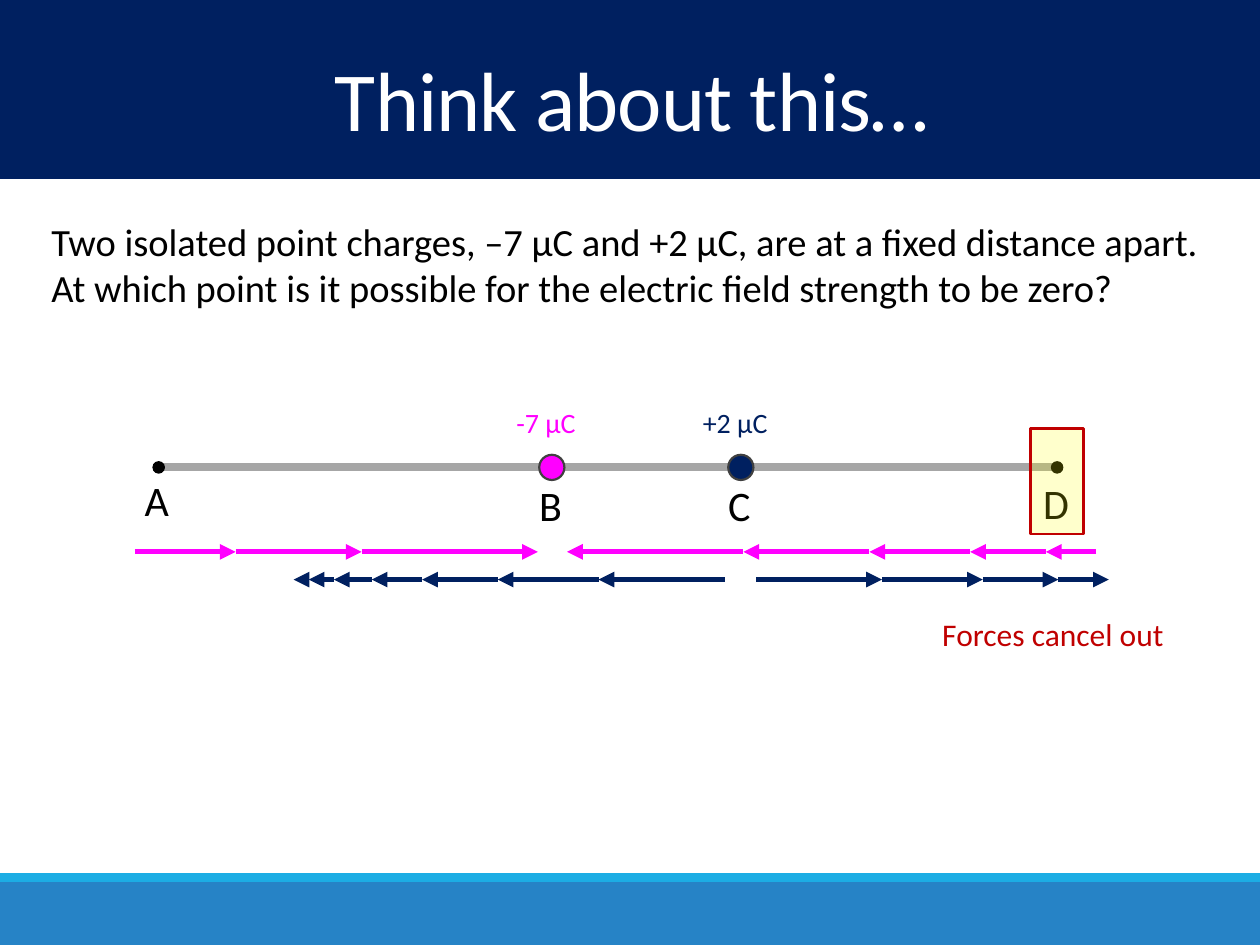
from typing import NamedTuple

from lxml import etree
from pptx import Presentation
from pptx import util as u
from pptx.dml import color
from pptx.enum import shapes, text
from pptx.oxml import ns

HUES = {
    "navy": "002060", "pink": "FF00FF", "red": "C00000", "yellow": "FFFF00",
    "white": "FFFFFF", "black": "000000", "gray": "A6A6A6", "edge": "404040",
    "blue": "2683C6", "sky": "1CADE4",
}
RECT = shapes.MSO_SHAPE.RECTANGLE
OVAL = shapes.MSO_SHAPE.OVAL
AXIS = 3.71


class Box(NamedTuple):
    x: float
    y: float
    w: float
    h: float


class Label(NamedTuple):
    words: str
    box: Box
    size: int
    hue: str
    wrap: bool = False


class Dot(NamedTuple):
    x: float
    size: float
    hue: str
    edge: str = ""


class Chain(NamedTuple):
    start: float
    y: float
    way: int
    steps: tuple[float, ...]
    hue: str
    inward: bool


BANDS = [
    (Box(0, 7, 10, 0.5), "blue"),
    (Box(0, 6.93, 10, 0.07), "sky"),
    (Box(0, 0, 10, 1.42), "navy"),
]
TITLE = Label("Think about this…", Box(0.03, 0.42, 9.97, 0.84), 48, "white", True)
DOTS = [
    Dot(4.38, 0.2, "pink", "edge"),
    Dot(5.88, 0.2, "navy", "edge"),
    Dot(1.26, 0.1, "black"),
    Dot(8.39, 0.1, "black"),
]
LABELS = [
    Label("Two isolated point charges, –7 μC and +2 μC, are at a fixed distance apart. "
          "At which point is it possible for the electric field strength to be zero?",
          Box(0.31, 1.68, 9.38, 0.84), 22, "black", True),
    Label("A", Box(1.05, 3.72, 0.42, 0.5), 24, "black"),
    Label("B", Box(4.18, 3.76, 0.39, 0.5), 24, "black"),
    Label("C", Box(5.68, 3.76, 0.42, 0.5), 24, "black"),
    Label("D", Box(8.18, 3.74, 0.44, 0.5), 24, "black"),
    Label("-7 μC", Box(4, 3.17, 0.74, 0.37), 16, "pink"),
    Label("+2 μC", Box(5.48, 3.17, 0.81, 0.37), 16, "navy"),
]
NOTE = Label("Forces cancel out", Box(7.38, 4.83, 2.13, 0.4), 18, "red", True)
CHAINS = [
    Chain(4.27, 4.38, -1, (1.4, 1, 0.8), "pink", True),
    Chain(4.5, 4.38, 1, (1.4, 1, 0.8, 0.6, 0.4), "pink", True),
    Chain(5.75, 4.6, -1, (1, 0.8, 0.6, 0.4, 0.3, 0.2), "navy", False),
    Chain(2.43, 4.6, -1, (0.1,), "navy", False),
    Chain(6, 4.6, 1, (1, 0.8, 0.6, 0.4), "navy", False),
]


def rgb(hue: str) -> color.RGBColor:
    """Look up a named colour."""
    return color.RGBColor.from_string(HUES[hue])


def add_shape(slide, kind, box: Box, hue: str, edge: str = "", width: float = 1.25):
    """Draw a filled shape, outlined if an edge is named."""
    shape = slide.shapes.add_shape(kind, *map(u.Inches, box))
    shape.shadow.inherit = False
    shape.fill.solid()
    shape.fill.fore_color.rgb = rgb(hue)
    if edge:
        shape.line.color.rgb = rgb(edge)
        shape.line.width = u.Pt(width)
    else:
        shape.line.fill.background()
    return shape


def add_label(slide, label: Label):
    """Write a label and return its text frame."""
    frame = slide.shapes.add_textbox(*map(u.Inches, label.box)).text_frame
    frame.word_wrap = label.wrap
    frame.text = label.words
    font = frame.paragraphs[0].runs[0].font
    font.name = "Calibri"
    font.size = u.Pt(label.size)
    font.color.rgb = rgb(label.hue)
    return frame


def add_title(slide, label: Label) -> None:
    """Write the centred, slightly tightened title."""
    frame = add_label(slide, label)
    frame.vertical_anchor = text.MSO_ANCHOR.MIDDLE
    para = frame.paragraphs[0]
    para.alignment = text.PP_ALIGN.CENTER
    para.line_spacing = 0.85
    para.runs[0].font._element.set("spc", "-50")


def add_line(slide, start: float, end: float, y: float, hue: str,
             width: float, arrow: bool = False) -> None:
    """Draw a level line, with an arrowhead at its end if asked."""
    line = slide.shapes.add_connector(
        shapes.MSO_CONNECTOR.STRAIGHT,
        u.Inches(start), u.Inches(y), u.Inches(end), u.Inches(y))
    line.line.color.rgb = rgb(hue)
    line.line.width = u.Pt(width)
    if arrow:
        tip = etree.SubElement(line.line._get_or_add_ln(), ns.qn("a:tailEnd"))
        tip.set("type", "triangle")
    etree.SubElement(line._element.spPr, ns.qn("a:effectLst"))


def add_chain(slide, chain: Chain) -> None:
    """Draw arrows end to end, moving away from a charge."""
    near = chain.start
    for step in chain.steps:
        far = near + chain.way * step
        ends = (far, near) if chain.inward else (near, far)
        add_line(slide, *ends, chain.y, chain.hue, 3, arrow=True)
        near = far


def add_mark(slide) -> None:
    """Highlight point D with a see-through box."""
    mark = add_shape(slide, RECT, Box(8.18, 3.4, 0.42, 0.84), "yellow", "red", 1.5)
    tint = mark._element.spPr.find(ns.qn("a:solidFill"))[0]
    etree.SubElement(tint, ns.qn("a:alpha")).set("val", "20000")


def main() -> None:
    """Build and save the slide."""
    deck = Presentation()
    deck.slide_width, deck.slide_height = u.Inches(10), u.Inches(7.5)
    slide = deck.slides.add_slide(deck.slide_layouts[6])
    for box, hue in BANDS:
        add_shape(slide, RECT, box, hue)
    add_title(slide, TITLE)
    add_line(slide, 1.26, 8.39, AXIS, "gray", 4.5)
    for dot in DOTS:
        half = dot.size / 2
        box = Box(dot.x - half, AXIS - half, dot.size, dot.size)
        add_shape(slide, OVAL, box, dot.hue, dot.edge)
    for label in LABELS:
        add_label(slide, label)
    for chain in CHAINS:
        add_chain(slide, chain)
    add_mark(slide)
    add_label(slide, NOTE)
    deck.save("out.pptx")


if __name__ == "__main__":
    main()
